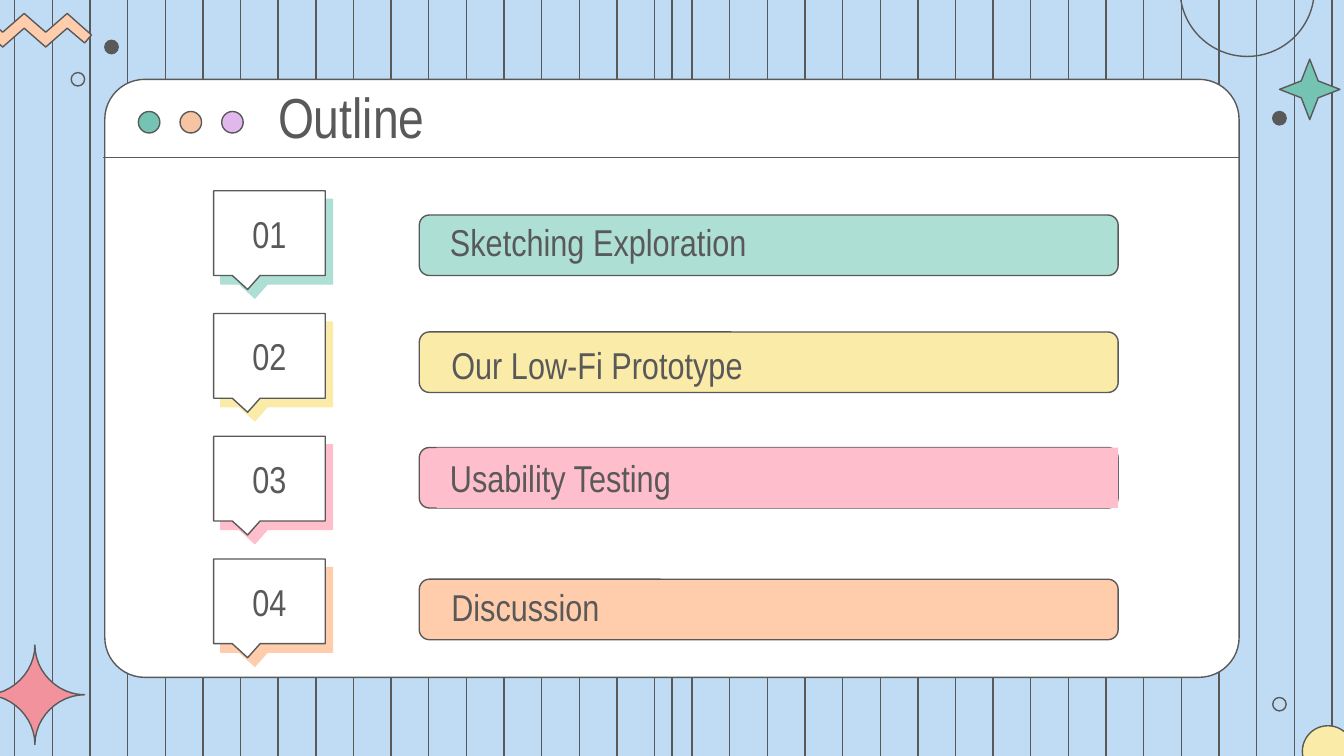
from lxml import etree
from pptx import Presentation
from pptx import util as u
from pptx.dml.color import RGBColor
from pptx.enum import shapes as kinds, text as txt
from pptx.oxml.ns import qn

WIDTH = 10
HEIGHT = WIDTH * 9 / 16
INK, WHITE, SKY = "595959", "FFFFFF", "C0DCF5"
TEAL, YELLOW, PEACH = "74C3B3", "FAEBA8", "FFCDAB"
FONT = "Arial Narrow"
SHAPE = kinds.MSO_SHAPE

TOPICS = [
    dict(title="Sketching Exploration", color="ADDFD5", bar_top=1.6,
         label=(3.25, 1.6, 4.64, 0.45), spacing=0.8),
    dict(title="Our Low-Fi Prototype", color=YELLOW, bar_top=2.47,
         label=(3.26, 2.5, 4.95, 0.42)),
    dict(title="Usability Testing", color="FFBECB", bar_top=3.33,
         label=(3.25, 3.33, 5.07, 0.45), label_fill="FFBECB"),
    dict(title="Discussion", color=PEACH, bar_top=4.31,
         label=(3.26, 4.31, 4.95, 0.45), spacing=0.9),
]
WINDOW_BUTTONS = [TEAL, "F6C4A2", "E1B8EC"]
CIRCLES = [
    (8.78, -0.58, 1, None), (9.69, 5.4, 0.38, YELLOW),
    (0.78, 0.3, 0.1, INK), (0.53, 0.54, 0.1, None),
    (9.47, 5.19, 0.1, None), (9.47, 0.83, 0.1, INK),
]
STRIPE_START, STRIPE_GAP, STRIPE_COUNT = 0.11, 0.28, 36
FIRST_CALLOUT, LAST_CALLOUT = 1.42, 4.16

deck = Presentation()
deck.slide_width, deck.slide_height = u.Inches(WIDTH), u.Inches(HEIGHT)
slide = deck.slides.add_slide(deck.slide_layouts[6])


def rgb(color):
    return RGBColor.from_string(color)


def paint(shape, fill, outline=INK):
    shape.shadow.inherit = False
    if fill:
        shape.fill.solid()
        shape.fill.fore_color.rgb = rgb(fill)
    else:
        shape.fill.background()
    if outline:
        shape.line.color.rgb = rgb(outline)
        shape.line.width = u.Pt(0.75)
    else:
        shape.line.fill.background()
    return shape


def add_shape(kind, box, fill, adjustments=()):
    shape = paint(slide.shapes.add_shape(kind, *map(u.Inches, box)), fill)
    for i, value in enumerate(adjustments):
        shape.adjustments[i] = value
    return shape


def add_line(x1, y1, x2, y2):
    line = slide.shapes.add_connector(
        kinds.MSO_CONNECTOR.STRAIGHT, *map(u.Inches, (x1, y1, x2, y2)))
    line.line.color.rgb = rgb(INK)
    line.line.width = u.Pt(0.75)
    etree.SubElement(line._element.spPr, qn("a:effectLst"))


def add_outline(points, fill):
    corners = [(u.Inches(x), u.Inches(y)) for x, y in points]
    builder = slide.shapes.build_freeform(*corners[0])
    builder.add_line_segments(corners[1:], close=True)
    paint(builder.convert_to_shape(), fill)


def add_text(words, box, size=20, align=txt.PP_ALIGN.LEFT, spacing=None, fill=None):
    label = slide.shapes.add_textbox(*map(u.Inches, box))
    if fill:
        paint(label, fill, None)
    frame = label.text_frame
    frame.word_wrap = True
    frame.vertical_anchor = txt.MSO_ANCHOR.MIDDLE
    frame.margin_left = frame.margin_right = u.Inches(0.1)
    frame.margin_top = frame.margin_bottom = u.Inches(0.1)
    frame.text = words
    paragraph = frame.paragraphs[0]
    paragraph.alignment = align
    if spacing:
        paragraph.line_spacing = spacing
    font = paragraph.runs[0].font
    font.name, font.size, font.color.rgb = FONT, u.Pt(size), rgb(INK)


def cast_shadow(shape, color):
    effects = shape._element.spPr.find(qn("a:effectLst"))
    shadow = etree.SubElement(effects, qn("a:outerShdw"), dist=str(u.Pt(6)),
                              dir=str(50 * 60000), algn="bl", rotWithShape="0")
    etree.SubElement(shadow, qn("a:srgbClr"), val=color)


def zigzag_points():
    upper = [(-0.62 + 0.16 * i, 0.1 if i % 2 else 0.24) for i in range(8)]
    lower = [(x, y + 0.11) for x, y in reversed(upper)]
    return [(-0.76, 0.12), *upper, (0.68, 0.26), (0.63, 0.32), *lower, (-0.81, 0.18)]


def sparkle_points(center_x, center_y, radius, pull=0.46, steps=12):
    points = []
    arc = []
    for i in range(steps):
        t = i / steps
        arc.append((3 * (1 - t) * t**2 * pull + t**3,
                    -((1 - t)**3 + 3 * (1 - t)**2 * t * pull)))
    for _ in range(4):
        points += [(center_x + radius * x, center_y + radius * y) for x, y in arc]
        arc = [(-y, x) for x, y in arc]
    return points


slide.background.fill.solid()
slide.background.fill.fore_color.rgb = rgb(SKY)
stripes = [STRIPE_START + STRIPE_GAP * i for i in range(STRIPE_COUNT)]
for x in stripes + [WIDTH / 2]:
    add_line(x, 0, x, HEIGHT)

add_shape(SHAPE.ROUNDED_RECTANGLE, (0.78, 0.59, 8.44, 4.45), WHITE, [0.067])
add_line(0.77, 1.17, 9.22, 1.17)
for i, color in enumerate(WINDOW_BUTTONS):
    add_shape(SHAPE.OVAL, (1.03 + 0.31 * i, 0.83, 0.16, 0.16), color)

for left, top, size, color in CIRCLES:
    add_shape(SHAPE.OVAL, (left, top, size, size), color)
add_outline(zigzag_points(), PEACH)
add_outline(sparkle_points(0.26, 5.17, 0.37), "F2929D")
add_shape(SHAPE.STAR_4_POINT, (9.52, 0.44, 0.45, 0.45), TEAL, [0.198])

add_text("Outline", (1.97, 0.57, 6.91, 0.58), size=30.2)
callout_pitch = (LAST_CALLOUT - FIRST_CALLOUT) / (len(TOPICS) - 1)
for i, topic in enumerate(TOPICS):
    top = FIRST_CALLOUT + callout_pitch * i
    callout = add_shape(SHAPE.ROUNDED_RECTANGULAR_CALLOUT, (1.59, top, 0.83, 0.63),
                        WHITE, [-0.195, 0.666, 0])
    cast_shadow(callout, topic["color"])
    add_text(f"{i + 1:02}", (1.67, top + 0.09, 0.67, 0.45), align=txt.PP_ALIGN.CENTER)
    add_shape(SHAPE.ROUNDED_RECTANGLE, (3.12, topic["bar_top"], 5.2, 0.45),
              topic["color"], [0.167])
    add_text(topic["title"], topic["label"], spacing=topic.get("spacing"),
             fill=topic.get("label_fill"))

deck.save("out.pptx")
